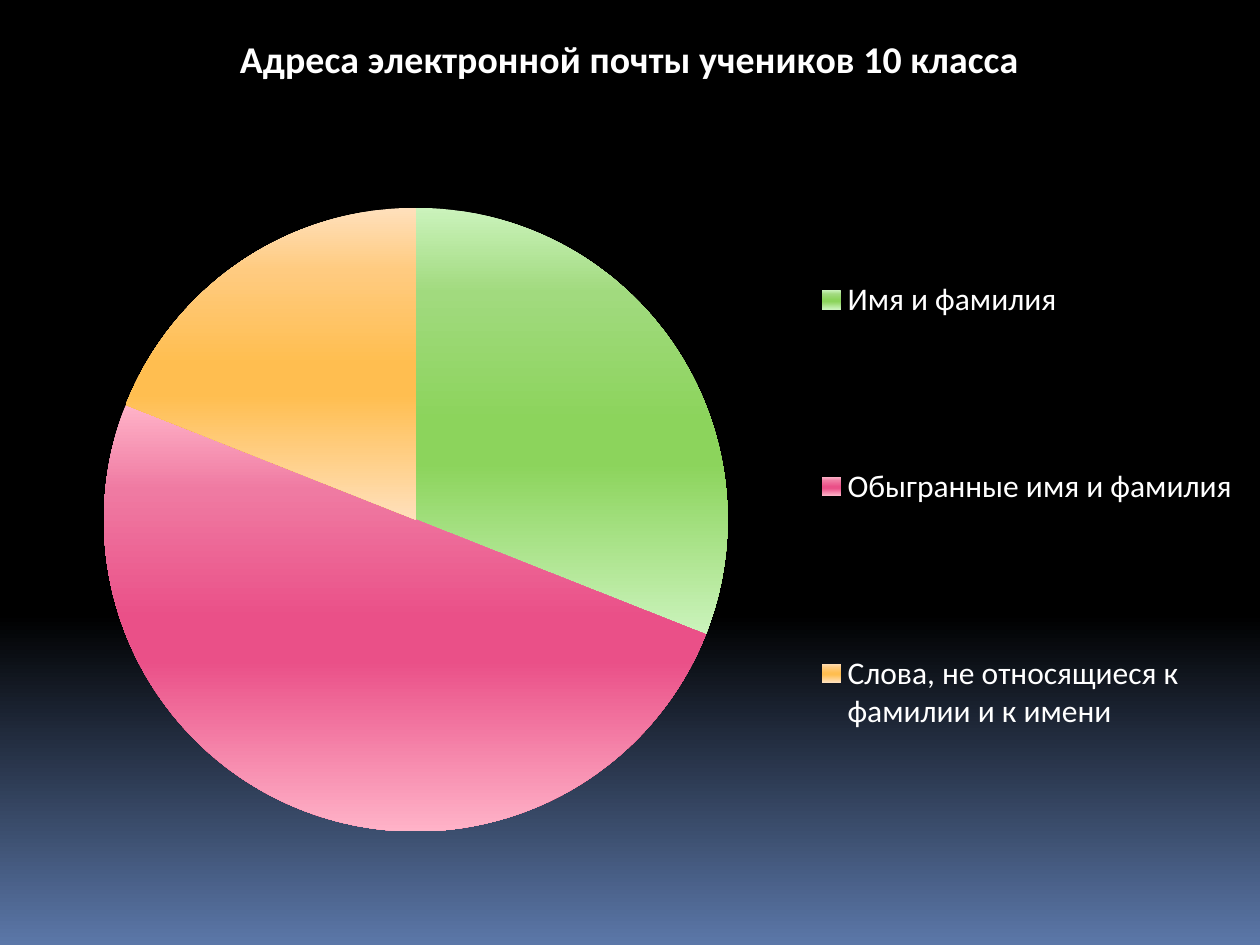
import copy

import pptx
import pptx.chart.data
import pptx.dml.color
import pptx.enum.chart
import pptx.oxml
import pptx.util

Cm = pptx.util.Cm
Pt = pptx.util.Pt
WIDE, HIGH = Cm(25.4), Cm(19.05)


def tint(code):
    return pptx.dml.color.RGBColor.from_string(code)


def style(font, size=18, bold=False, color="FFFFFF", face="Calibri"):
    font.name = face
    font.size = Pt(size)
    font.bold = bold
    font.color.rgb = tint(color)


def write(frame, text, **form):
    frame.text = text
    style(frame.paragraphs[0].runs[0].font, **form)


def blend(fill, root, stops):
    fill.gradient()
    fill.gradient_angle = 270
    ramp = root.xpath(".//a:gsLst")[-1]
    for _ in stops[2:]:
        ramp.append(copy.deepcopy(ramp[0]))
    for stop, (place, code) in zip(fill.gradient_stops, stops):
        stop.position = place
        stop.color.rgb = tint(code)


def layout(x, y, w, h, inner=False):
    target = '<c:layoutTarget val="inner"/>' if inner else ""
    sizes = "".join(f'<c:{k} val="{v}"/>' for k, v in zip("xywh", (x, y, w, h)))
    return pptx.oxml.parse_xml(
        '<c:layout xmlns:c="http://schemas.openxmlformats.org/drawingml/2006/chart">'
        f'<c:manualLayout>{target}<c:xMode val="edge"/><c:yMode val="edge"/>'
        f"{sizes}</c:manualLayout></c:layout>"
    )


class Deck:
    def __init__(self):
        self.show = pptx.Presentation()
        self.show.slide_width, self.show.slide_height = WIDE, HIGH
        self.slide = self.show.slides.add_slide(self.show.slide_layouts[6])

    def back(self, stops):
        blend(self.slide.background.fill, self.slide.element, stops)

    def pie(self, title, parts, hues):
        data = pptx.chart.data.CategoryChartData()
        data.categories = list(parts)
        data.add_series("Series 1", list(parts.values()))
        kind = pptx.enum.chart.XL_CHART_TYPE.PIE
        chart = self.slide.shapes.add_chart(kind, 0, 0, WIDE, HIGH, data).chart
        style(chart.font)
        chart.has_title = True
        write(chart.chart_title.text_frame, title, size=21.6, bold=True)
        chart.plots[0].vary_by_categories = True
        points = chart.plots[0].series[0].points
        for index, (light, soft, core) in enumerate(hues):
            shape = points[index].format
            shape.line.fill.background()
            stops = [(0, light), (0.2, soft), (0.5, core), (0.6, core), (1, light)]
            blend(shape.fill, chart.element, stops)
        self.legend(chart)
        area = chart.element.xpath(".//c:plotArea")[0]
        for old in area.xpath("./c:layout"):
            area.remove(old)
        area.insert(0, layout(0.08, 0.22, 0.5, 0.66, inner=True))

    def legend(self, chart):
        chart.has_legend = True
        key = chart.legend
        key.position = pptx.enum.chart.XL_LEGEND_POSITION.RIGHT
        key.include_in_layout = False
        style(key.font)
        node = chart.element.xpath(".//c:legend")[0]
        for old in node.xpath("./c:layout"):
            node.remove(old)
        node.xpath("./c:legendPos")[0].addnext(layout(0.64, 0.14, 0.35, 0.79))


def main():
    deck = Deck()
    deck.back([(0, "000000"), (0.65, "000000"), (1, "5B77A8")])
    deck.pie(
        "Адреса электронной почты учеников 10 класса",
        {
            "Имя и фамилия": 31,
            "Обыгранные имя и фамилия": 50,
            "Слова, не относящиеся к фамилии и к имени": 19,
        },
        [
            ("CBF3BC", "A1DA7E", "8CD45C"),
            ("FFB3C8", "EF7AA2", "EA5088"),
            ("FFE0BC", "FFCB80", "FFBE50"),
        ],
    )
    deck.show.save("out.pptx")


if __name__ == "__main__":
    main()
